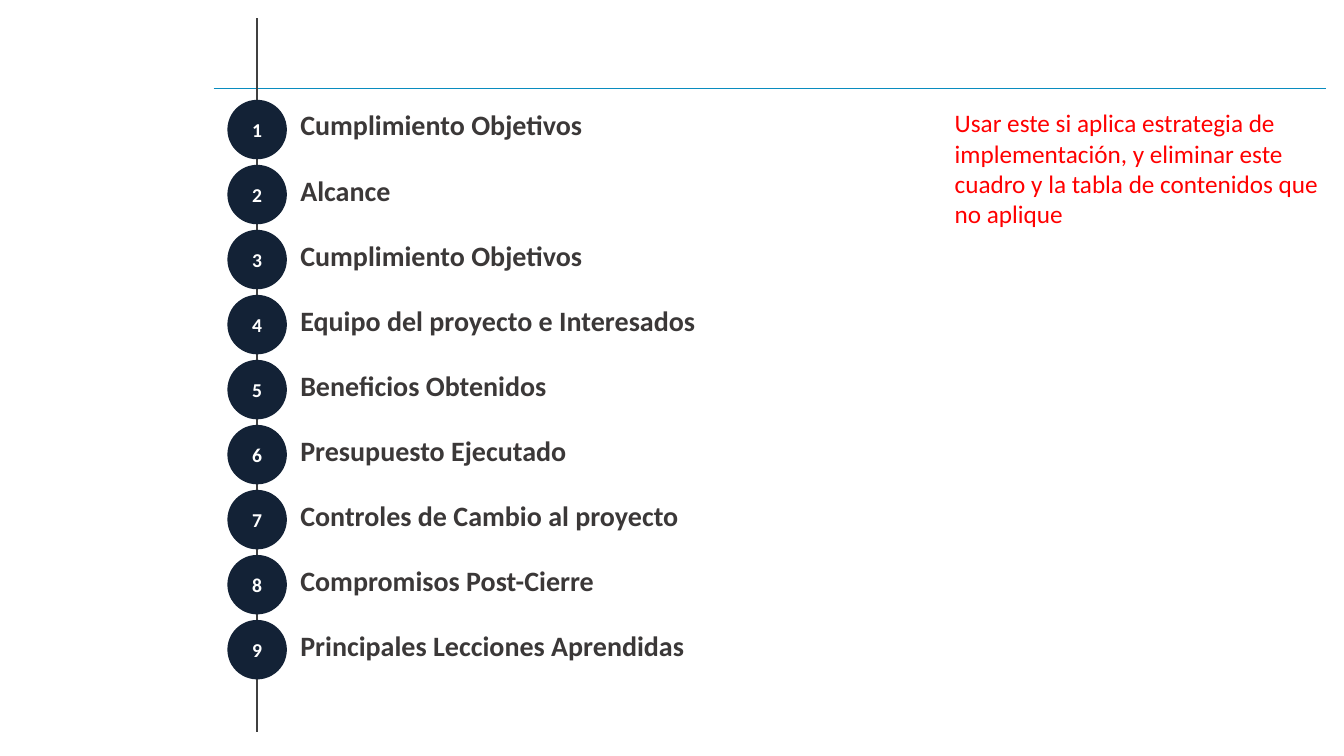
"""Build the numbered contents slide with its vertical timeline."""
from dataclasses import dataclass

from pptx import Presentation
from pptx.dml.color import RGBColor
from pptx.enum.shapes import MSO_CONNECTOR as Connector, MSO_SHAPE as Shape
from pptx.enum.text import MSO_ANCHOR as Anchor, PP_ALIGN as Align
from pptx.util import Inches, Pt
from lxml.etree import SubElement
from pptx.oxml.ns import qn

TOPICS = [
    "Cumplimiento Objetivos",
    "Alcance",
    "Cumplimiento Objetivos",
    "Equipo del proyecto e Interesados",
    "Beneficios Obtenidos",
    "Presupuesto Ejecutado",
    "Controles de Cambio al proyecto",
    "Compromisos Post-Cierre",
    "Principales Lecciones Aprendidas",
]
ADVICE = (
    "Usar este si aplica estrategia de implementación, y eliminar este "
    "cuadro y la tabla de contenidos que no aplique"
)


@dataclass(frozen=True)
class Theme:
    font: str = "Calibri"
    badge: str = "132236"
    number: str = "FFFFFF"
    topic: str = "3B3838"
    advice: str = "FF0000"
    axis: str = "404040"
    rule: str = "098CBF"
    number_size: int = 14
    topic_size: int = 20
    advice_size: int = 18


THEME = Theme()
WIDTH, HEIGHT = 13.33, 7.5
AXIS_X = 2.55
BADGE = 0.59
FIRST_TOP, LAST_TOP = 0.99, 6.15
PITCH = (LAST_TOP - FIRST_TOP) / (len(TOPICS) - 1)
TOPIC_LEFT, TOPIC_DROP = 2.88, 0.07
TOPIC_SIZE = (8.99, 0.43)


def add_line(slide, start, end, color, width):
    line = slide.shapes.add_connector(
        Connector.STRAIGHT, *map(Inches, (*start, *end))
    )
    line.line.color.rgb = RGBColor.from_string(color)
    line.line.width = Pt(width)
    SubElement(line._element.spPr, qn("a:effectLst"))


def write(holder, text, size, color, bold=False):
    paragraph = holder.text_frame.paragraphs[0]
    run = paragraph.add_run()
    run.text = text
    run.font.name = THEME.font
    run.font.size = Pt(size)
    run.font.bold = bold
    run.font.color.rgb = RGBColor.from_string(color)
    return paragraph


def add_text(slide, box, text, size, color, bold=False):
    holder = slide.shapes.add_textbox(*map(Inches, box))
    holder.text_frame.word_wrap = True
    return write(holder, text, size, color, bold)


def add_badge(slide, top, number):
    badge = slide.shapes.add_shape(
        Shape.OVAL, *map(Inches, (AXIS_X - BADGE / 2, top, BADGE, BADGE))
    )
    badge.shadow.inherit = False
    badge.fill.solid()
    badge.fill.fore_color.rgb = RGBColor.from_string(THEME.badge)
    badge.line.fill.background()
    badge.text_frame.vertical_anchor = Anchor.MIDDLE
    label = write(badge, str(number), THEME.number_size, THEME.number, True)
    label.alignment = Align.CENTER


def main():
    deck = Presentation()
    deck.slide_width, deck.slide_height = Inches(WIDTH), Inches(HEIGHT)
    slide = deck.slides.add_slide(deck.slide_layouts.get_by_name("Blank"))

    add_line(slide, (2.12, 0.88), (13.15, 0.88), THEME.rule, 0.5)
    add_line(slide, (AXIS_X, 0.18), (AXIS_X, 7.26), THEME.axis, 1)

    for index, topic in enumerate(TOPICS):
        top = FIRST_TOP + index * PITCH
        box = (TOPIC_LEFT, top + TOPIC_DROP, *TOPIC_SIZE)
        entry = add_text(slide, box, topic, THEME.topic_size, THEME.topic, True)
        entry.line_spacing = 0.9
        add_badge(slide, top, index + 1)

    add_text(
        slide, (9.37, 1.02, 3.82, 1.31), ADVICE, THEME.advice_size, THEME.advice
    )
    deck.save("out.pptx")


if __name__ == "__main__":
    main()
